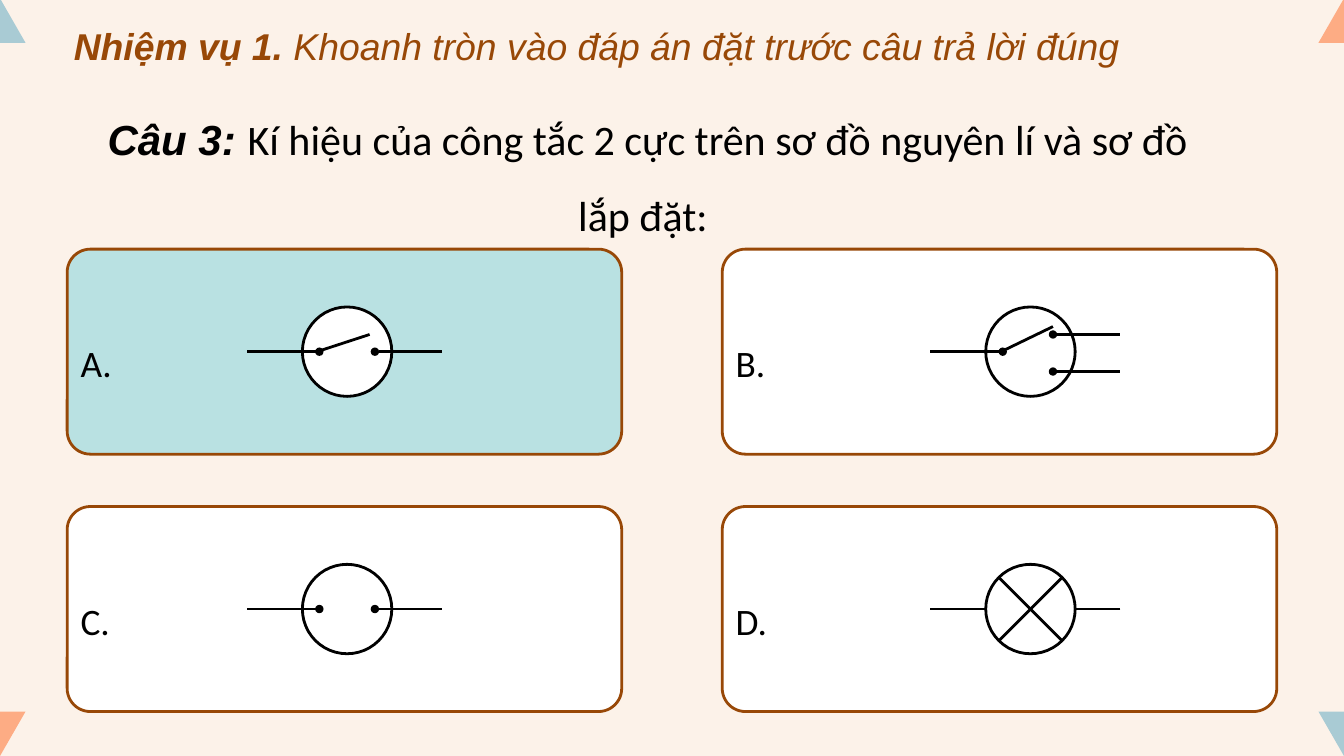
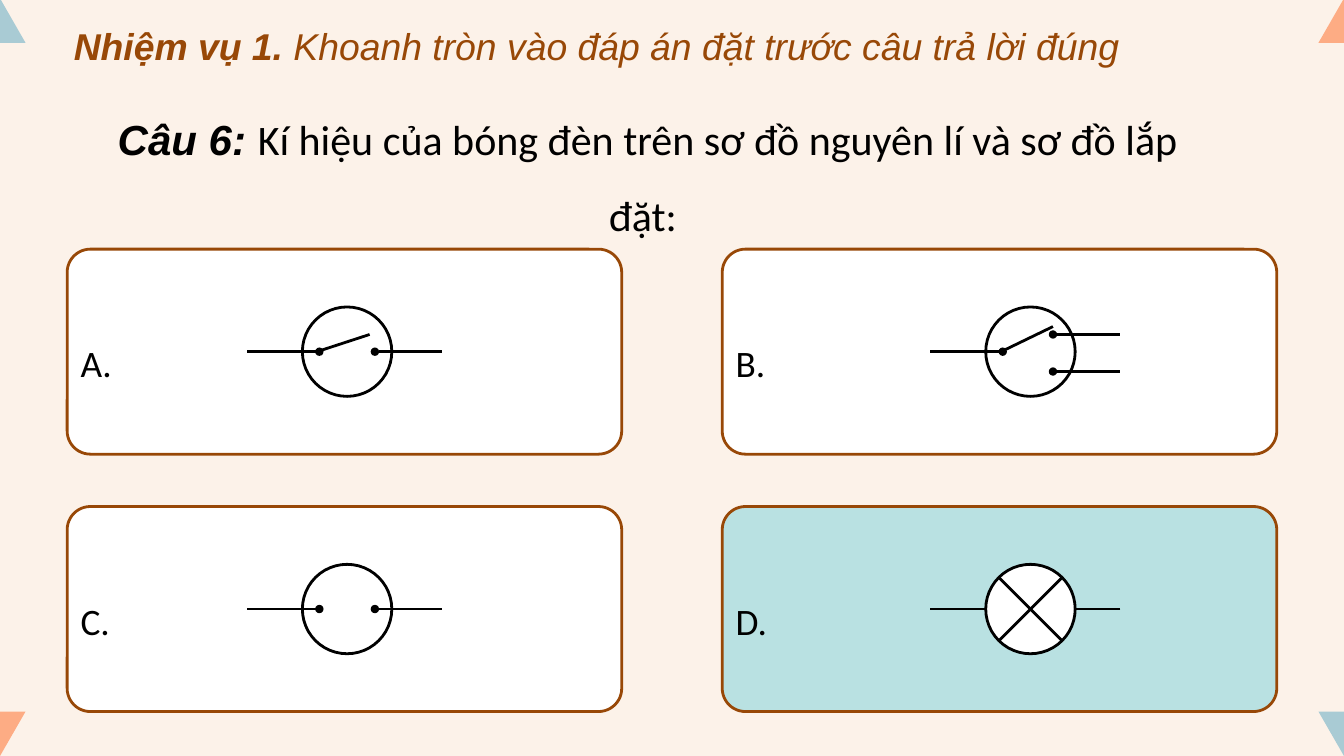
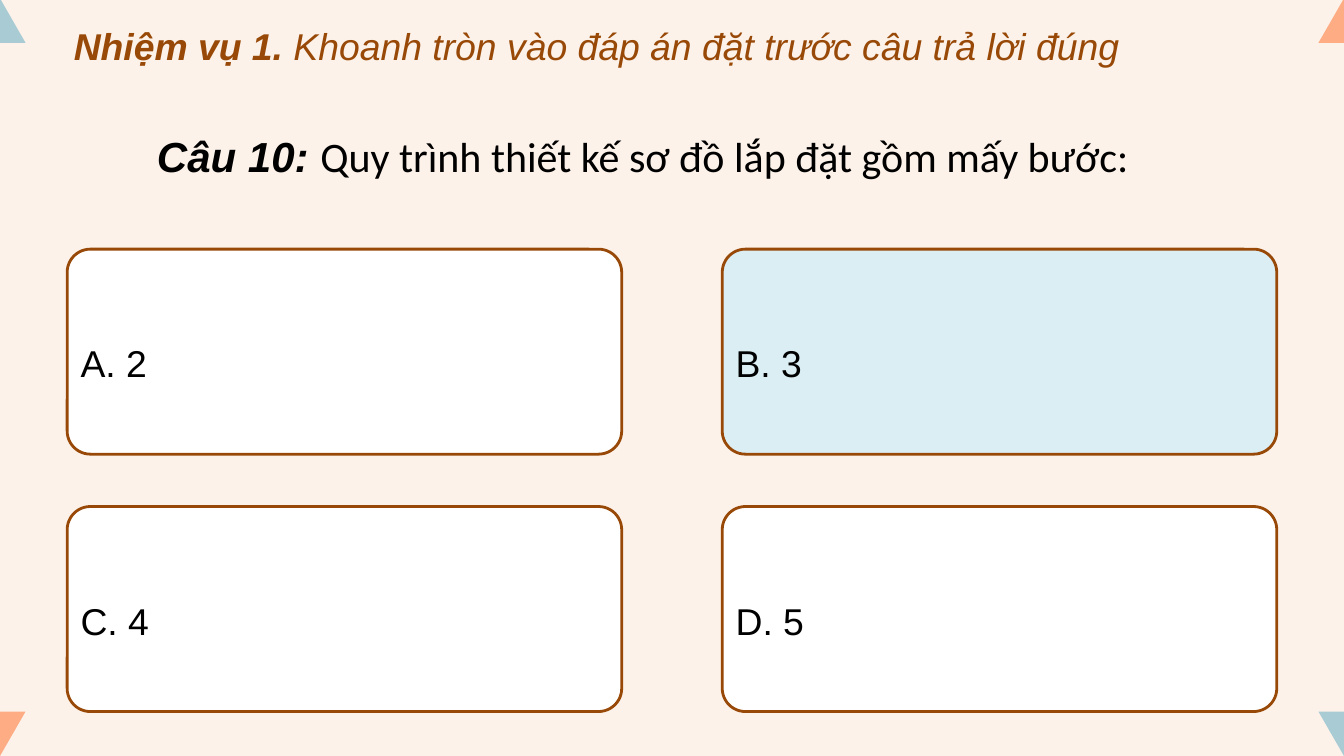
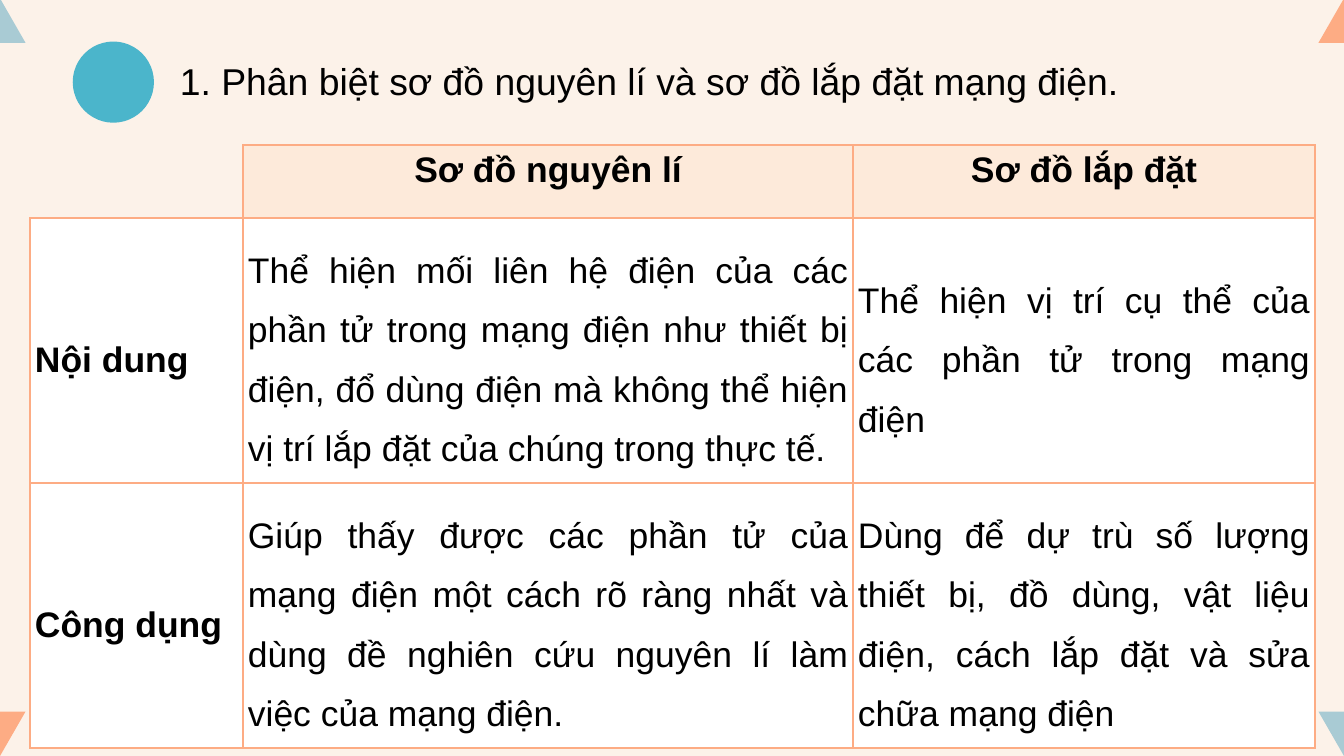
import pptx
import pptx.util
import pptx.dml.color
import pptx.enum.shapes
import pptx.enum.text
import pptx.oxml.ns
import lxml.etree

Cm, Pt = pptx.util.Cm, pptx.util.Pt
SHAPE = pptx.enum.shapes.MSO_SHAPE
ALIGN = pptx.enum.text.PP_ALIGN
MIDDLE = pptx.enum.text.MSO_ANCHOR.MIDDLE
qn = pptx.oxml.ns.qn

COLORS = {
    "paper": "FCF2E9", "white": "FFFFFF", "black": "000000",
    "brown": "984807", "blue": "A9CBD4", "orange": "FDAC84",
    "teal": "B9E1E2", "pale": "DBEEF4", "dot": "4BB5CB", "head": "FDEADA",
}
PAGE_W, PAGE_H = 50.8, 28.58
CARD_W, CARD_H = 20.96, 7.75
CARD_LEFT, CARD_TOP = 2.54, 9.42
CARD_STEP_X, CARD_STEP_Y = 24.76, 9.73
RADIUS = 1.69
BORDER_PT = 2.25

# Wires run from (x1, y1) to (x2, y2) around the symbol's centre; True puts a dot at the start.
RIGHT_LEAD = (1.05, 0, 3.6, 0, True)
LEFT_LEAD = (-1.05, 0, -3.8, 0, True)
SYMBOLS = {
    "switch": {"x": 10.58, "back": [],
               "front": [RIGHT_LEAD, LEFT_LEAD, (0.85, -0.65, -1.05, -0.03, False)]},
    "two_way": {"x": 11.65, "back": [],
                "front": [(0.85, 0.75, 3.4, 0.75, True), LEFT_LEAD,
                          (0.85, -0.95, -1.05, -0.03, False),
                          (0.85, -0.65, 3.4, -0.65, True)]},
    "open": {"x": 10.58, "back": [], "front": [RIGHT_LEAD, LEFT_LEAD]},
    "lamp": {"x": 11.65, "back": [(3.4, 0, -3.8, 0, False)],
             "front": [(1.2, 1.2, -1.2, -1.2, False), (1.2, -1.2, -1.2, 1.2, False)]},
}
CIRCUIT_OPTIONS = [("A. ", "switch"), ("B. ", "two_way"), ("C. ", "open"), ("D. ", "lamp")]
NUMBER_OPTIONS = [("A. 2", None), ("B. 3", None), ("C. 4", None), ("D. 5", None)]


def rgb(name):
    return pptx.dml.color.RGBColor.from_string(COLORS[name])


def add_run(p, text, size, font="Arial", color="black", bold=False, italic=False):
    r = p.add_run()
    r.text = text
    r.font.size, r.font.name = Pt(size), font
    r.font.bold, r.font.italic = bold, italic
    r.font.color.rgb = rgb(color)


def add_block(shapes, kind, x, y, w, h, fill, line=None):
    sp = shapes.add_shape(kind, Cm(x), Cm(y), Cm(w), Cm(h))
    sp.shadow.inherit = False
    sp.fill.solid()
    sp.fill.fore_color.rgb = rgb(fill)
    if line:
        sp.line.color.rgb = rgb(line)
        sp.line.width = Pt(3)
    else:
        sp.line.fill.background()
    return sp


def add_text(shapes, x, y, w, h):
    tf = shapes.add_textbox(Cm(x), Cm(y), Cm(w), Cm(h)).text_frame
    tf.word_wrap = True
    tf.auto_size = pptx.enum.text.MSO_AUTO_SIZE.SHAPE_TO_FIT_TEXT
    return tf.paragraphs[0]


def add_wire(shapes, cx, cy, x1, y1, x2, y2, dotted):
    wire = shapes.add_connector(pptx.enum.shapes.MSO_CONNECTOR.STRAIGHT,
                                Cm(cx + x1), Cm(cy + y1), Cm(cx + x2), Cm(cy + y2))
    wire.line.color.rgb = rgb("black")
    wire.line.width = Pt(3)
    if dotted:
        lxml.etree.SubElement(wire.line._get_or_add_ln(), qn("a:headEnd"), type="oval")
    lxml.etree.SubElement(wire._element.spPr, qn("a:effectLst"))


def new_slide(prs):
    s = prs.slides.add_slide(prs.slide_layouts[6])
    s.background.fill.solid()
    s.background.fill.fore_color.rgb = rgb("paper")
    # Corner triangles, centred on the side edges
    w, h = 1.93, 1.68
    for y, turn, colors in ((-0.06, 0, ("blue", "orange")),
                            (PAGE_H - h, 180, ("orange", "blue"))):
        for x, color in zip((0, PAGE_W), colors):
            add_block(s.shapes, SHAPE.ISOSCELES_TRIANGLE, x - w / 2, y, w, h, color).rotation = turn
    return s


def add_symbol(shapes, name, x, y):
    symbol = SYMBOLS[name]
    cx, cy = x + symbol["x"], y + CARD_H / 2
    for wire in symbol["back"]:
        add_wire(shapes, cx, cy, *wire)
    add_block(shapes, SHAPE.OVAL, cx - RADIUS, cy - RADIUS, 2 * RADIUS, 2 * RADIUS, "white", "black")
    for wire in symbol["front"]:
        add_wire(shapes, cx, cy, *wire)


def add_card(s, x, y, label, symbol, fill):
    shapes = s.shapes.add_group_shape().shapes if symbol else s.shapes
    sp = add_block(shapes, SHAPE.ROUNDED_RECTANGLE, x, y, CARD_W, CARD_H, fill, "brown")
    sp.adjustments[0] = 0.113
    sp.text_frame.vertical_anchor = MIDDLE
    p = sp.text_frame.paragraphs[0]
    p.alignment, p.line_spacing = ALIGN.JUSTIFY, 1.5
    add_run(p, label, 40, "Calibri" if symbol else "Arial")
    if symbol:
        add_symbol(shapes, symbol, x, y)


def quiz_slide(prs, number, question, options, answer, answer_fill, top=3.23, height=5.66):
    s = new_slide(prs)
    # Task line
    p = add_text(s.shapes, 2.54, 0.76, 43.23, 1.96)
    add_run(p, "Nhiệm vụ 1. ", 40, color="brown", bold=True, italic=True)
    add_run(p, "Khoanh tròn vào đáp án đặt trước câu trả lời đúng", 40, color="brown", italic=True)
    # Question
    p = add_text(s.shapes, 3.18, top, 42.6, height)
    p.alignment, p.line_spacing = ALIGN.CENTER, 1.5
    add_run(p, f"Câu {number}: ", 45, bold=True, italic=True)
    add_run(p, question, 45, "Calibri")
    # Two by two answer cards
    for i, (label, symbol) in enumerate(options):
        row, col = divmod(i, 2)
        add_card(s, CARD_LEFT + col * CARD_STEP_X, CARD_TOP + row * CARD_STEP_Y,
                 label, symbol, answer_fill if label[0] == answer else "white")


def set_borders(cell, sides):
    tc_pr = cell._tc.get_or_add_tcPr()
    for i, side in enumerate(("L", "R", "T", "B")):
        ln = lxml.etree.Element(qn(f"a:ln{side}"), w=str(Pt(BORDER_PT)))
        if side in sides:
            fill = lxml.etree.SubElement(ln, qn("a:solidFill"))
            lxml.etree.SubElement(fill, qn("a:srgbClr"), val=COLORS["orange"])
        else:
            lxml.etree.SubElement(ln, qn("a:noFill"))
        tc_pr.insert(i, ln)


def add_comparison(s, x, y, col_widths, row_heights, rows):
    table = s.shapes.add_table(len(rows), len(col_widths), Cm(x), Cm(y),
                               Cm(sum(col_widths)), Cm(sum(row_heights))).table
    table.first_row = table.horz_banding = False
    for col, w in zip(table.columns, col_widths):
        col.width = Cm(w)
    for row, h in zip(table.rows, row_heights):
        row.height = Cm(h)
    for i, texts in enumerate(rows):
        for j, text in enumerate(texts):
            cell = table.cell(i, j)
            cell.margin_left = cell.margin_right = cell.margin_top = cell.margin_bottom = Cm(0.18)
            if not text:
                cell.fill.background()
                set_borders(cell, "RB")
                continue
            cell.fill.solid()
            cell.fill.fore_color.rgb = rgb("white" if i else "head")
            set_borders(cell, "LRTB")
            p = cell.text_frame.paragraphs[0]
            p.alignment = ALIGN.JUSTIFY if i else ALIGN.CENTER
            if i:
                p.line_spacing = 1.5
                cell.vertical_anchor = MIDDLE
            add_run(p, text, 38, bold=i == 0 or j == 0)


def comparison_slide(prs):
    s = new_slide(prs)
    # Heading with its round marker
    heading = s.shapes.add_group_shape().shapes
    add_block(heading, SHAPE.OVAL, 2.75, 1.57, 3.07, 3.07, "dot")
    p = add_text(heading, 6.55, 2.06, 39.55, 1.96)
    add_run(p, "1. Phân biệt sơ đồ nguyên lí và sơ đồ lắp đặt mạng điện.", 40)
    # Comparison table
    add_comparison(s, 1.14, 5.49, (8.05, 23.06, 17.45), (2.75, 9.99, 9.99), [
        ("", "Sơ đồ nguyên lí", "Sơ đồ lắp đặt"),
        ("Nội dung",
         "Thể hiện mối liên hệ điện của các phần tử trong mạng điện như thiết bị điện, "
         "đổ dùng điện mà không thể hiện vị trí lắp đặt của chúng trong thực tế.",
         "Thể hiện vị trí cụ thể của các phần tử trong mạng điện"),
        ("Công dụng",
         "Giúp thấy được các phần tử của mạng điện một cách rõ ràng nhất và dùng đề "
         "nghiên cứu nguyên lí làm việc của mạng điện.",
         "Dùng để dự trù số lượng thiết bị, đồ dùng, vật liệu điện, cách lắp đặt và "
         "sửa chữa mạng điện"),
    ])


def main():
    prs = pptx.Presentation()
    prs.slide_width, prs.slide_height = Cm(PAGE_W), Cm(PAGE_H)
    quiz_slide(prs, 3, "Kí hiệu của công tắc 2 cực trên sơ đồ nguyên lí và sơ đồ lắp đặt: ",
               CIRCUIT_OPTIONS, "A", "teal")
    quiz_slide(prs, 6, "Kí hiệu của bóng đèn trên sơ đồ nguyên lí và sơ đồ lắp đặt: ",
               CIRCUIT_OPTIONS, "D", "teal")
    quiz_slide(prs, 10, "Quy trình thiết kế sơ đồ lắp đặt gồm mấy bước: ",
               NUMBER_OPTIONS, "B", "pale", top=3.84, height=2.79)
    comparison_slide(prs)
    prs.save("out.pptx")


if __name__ == "__main__":
    main()
